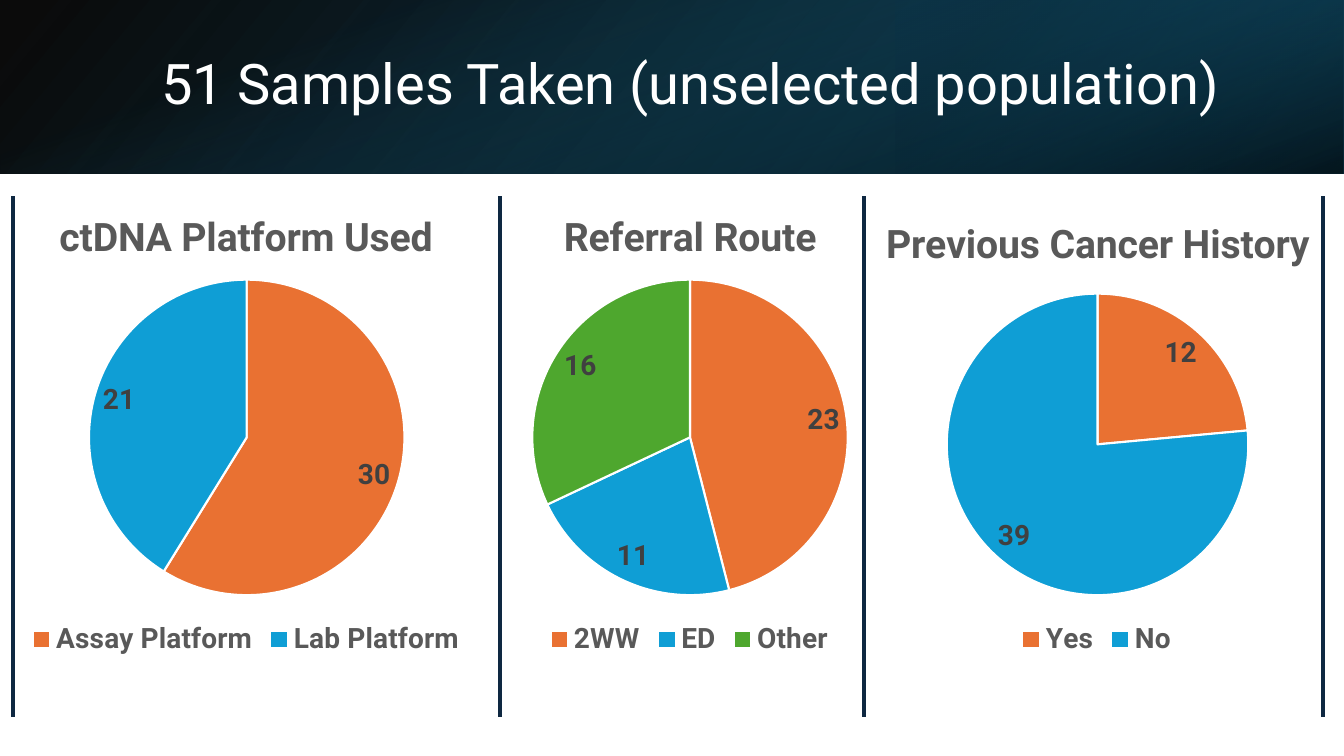
from dataclasses import dataclass

from lxml import etree
from pptx import Presentation
from pptx.chart.data import CategoryChartData
from pptx.dml.color import RGBColor
from pptx.enum.chart import XL_CHART_TYPE, XL_LABEL_POSITION, XL_LEGEND_POSITION
from pptx.enum.shapes import MSO_CONNECTOR, MSO_SHAPE
from pptx.enum.text import MSO_ANCHOR
from pptx.oxml import parse_xml
from pptx.oxml.ns import nsdecls, qn
from pptx.util import Cm, Pt

PIE = XL_CHART_TYPE.PIE
BEST = XL_LABEL_POSITION.BEST_FIT
BOTTOM = XL_LEGEND_POSITION.BOTTOM
STRAIGHT = MSO_CONNECTOR.STRAIGHT
RECT = MSO_SHAPE.RECTANGLE
MIDDLE = MSO_ANCHOR.MIDDLE

WIDE, HIGH = 33.87, 19.05
BAND = 4.37
TOP = 4.95
CHART_HIGH = 11.73
PIE_BASE = 15.0


@dataclass(frozen=True)
class Theme:
    font: str = "Roboto"
    white: str = "FFFFFF"
    head: str = "595959"
    label: str = "404040"
    rule: str = "0E2841"
    slices: tuple = ("E97132", "0F9ED5", "4EA72E")
    title_size: int = 40
    head_size: int = 28
    label_size: int = 20
    rule_size: int = 3


class Deck:
    def __init__(self, theme):
        self.theme = theme
        self.show = Presentation()
        self.show.slide_width = Cm(WIDE)
        self.show.slide_height = Cm(HIGH)
        self.slide = self.show.slides.add_slide(self.show.slide_layouts[6])

    def style(self, font, size, color, bold):
        font.name = self.theme.font
        font.size = Pt(size)
        font.bold = bold
        font.color.rgb = RGBColor.from_string(color)

    def shade(self, box, stops, angle, turn=0, flip=False):
        shape = self.slide.shapes.add_shape(RECT, *map(Cm, box))
        shape.shadow.inherit = False
        shape.line.fill.background()
        shape.rotation = turn
        props = shape._element.spPr
        if flip:
            props.find(qn("a:xfrm")).set("flipH", "1")
        marks = "".join(
            f'<a:gs pos="{at * 1000}"><a:srgbClr val="{color}">'
            f'<a:alpha val="{alpha * 1000}"/></a:srgbClr></a:gs>'
            for at, color, alpha in stops)
        props.find(qn("a:prstGeom")).addnext(parse_xml(
            f'<a:gradFill {nsdecls("a")} rotWithShape="1"><a:gsLst>{marks}</a:gsLst>'
            f'<a:lin ang="{angle * 60000}" scaled="0"/></a:gradFill>'))

    def title(self, text, box):
        frame = self.slide.shapes.add_textbox(*map(Cm, box)).text_frame
        frame.word_wrap = True
        frame.vertical_anchor = MIDDLE
        frame.text = text
        line = frame.paragraphs[0]
        line.line_spacing = 0.9
        self.style(line.runs[0].font, self.theme.title_size, self.theme.white, False)

    def rule(self, x, top, end):
        line = self.slide.shapes.add_connector(STRAIGHT, Cm(x), Cm(top), Cm(x), Cm(end))
        line.line.color.rgb = RGBColor.from_string(self.theme.rule)
        line.line.width = Pt(self.theme.rule_size)
        etree.SubElement(line._element.spPr, qn("a:effectLst"))

    def place(self, node, **marks):
        for old in node.findall(qn("c:layout")):
            node.remove(old)
        modes = "".join(f'<c:{key}Mode val="edge"/>' for key in "xy")
        sizes = "".join(f'<c:{key} val="{val:.4f}"/>' for key, val in marks.items())
        inner = '<c:layoutTarget val="inner"/>' if "w" in marks else ""
        layout = parse_xml(f'<c:layout {nsdecls("c")}><c:manualLayout>{inner}{modes}{sizes}'
                           '</c:manualLayout></c:layout>')
        node.insert(0 if inner else 1, layout)

    def pie(self, name, data, left, width, mid, size, head):
        theme = self.theme
        table = CategoryChartData()
        table.categories = list(data)
        table.add_series("Series 1", list(data.values()))
        box = map(Cm, (left, TOP, width, CHART_HIGH))
        chart = self.slide.shapes.add_chart(PIE, *box, table).chart
        chart.font.name = theme.font

        chart.has_title = True
        frame = chart.chart_title.text_frame
        frame.text = name
        self.style(frame.paragraphs[0].runs[0].font, theme.head_size, theme.head, True)
        self.place(chart.chart_title._element,
                   x=(head[0] - left) / width, y=(head[1] - TOP) / CHART_HIGH)

        chart.has_legend = True
        chart.legend.position = BOTTOM
        chart.legend.include_in_layout = False
        self.style(chart.legend.font, theme.label_size, theme.head, True)

        plot = chart.plots[0]
        plot.vary_by_categories = True
        plot.has_data_labels = True
        labels = plot.data_labels
        labels.show_value = True
        labels.show_percentage = False
        labels.position = BEST
        self.style(labels.font, theme.label_size, theme.label, True)
        for place, color in zip(range(len(data)), theme.slices):
            look = plot.series[0].points[place].format
            look.fill.solid()
            look.fill.fore_color.rgb = RGBColor.from_string(color)
            look.line.color.rgb = RGBColor.from_string(theme.white)
            look.line.width = Pt(1.5)
        area = chart._chartSpace.find(".//" + qn("c:plotArea"))
        self.place(area, x=(mid - size / 2 - left) / width,
                   y=(PIE_BASE - size - TOP) / CHART_HIGH,
                   w=size / width, h=size / CHART_HIGH)


def main():
    deck = Deck(Theme())
    deck.shade((0, 0, WIDE, BAND), [(0, "000000", 96), (100, "104862", 100)], 140, flip=True)
    deck.shade((WIDE * 2 / 3, 0, WIDE / 3, BAND),
               [(19, "0B3041", 68), (100, "156082", 79)], 320, 180, True)
    deck.shade(((WIDE - BAND) / 2, (BAND - WIDE) / 2, BAND, WIDE),
               [(23, "156082", 0), (99, "000000", 74)], 340, 90)
    deck.title("51 Samples Taken (unselected population)", (3.81, 0.95, 27.89, 2.44))

    deck.pie("ctDNA Platform Used", {"Assay Platform": 30, "Lab Platform": 21},
             -1.35, 15.11, 6.22, 7.95, (1.32, 5.14))
    deck.pie("Referral Route", {"2WW": 23, "ED": 11, "Other": 16},
             9.3, 16.15, 17.39, 7.95, (14.03, 5.14))
    deck.pie("Previous Cancer History", {"Yes": 12, "No": 39},
             20.09, 15.11, 27.66, 7.6, (22.15, 5.32))

    for x in (0.33, 12.6, 21.77, 33.35):
        deck.rule(x, TOP, 18.08)
    deck.show.save("out.pptx")


if __name__ == "__main__":
    main()
